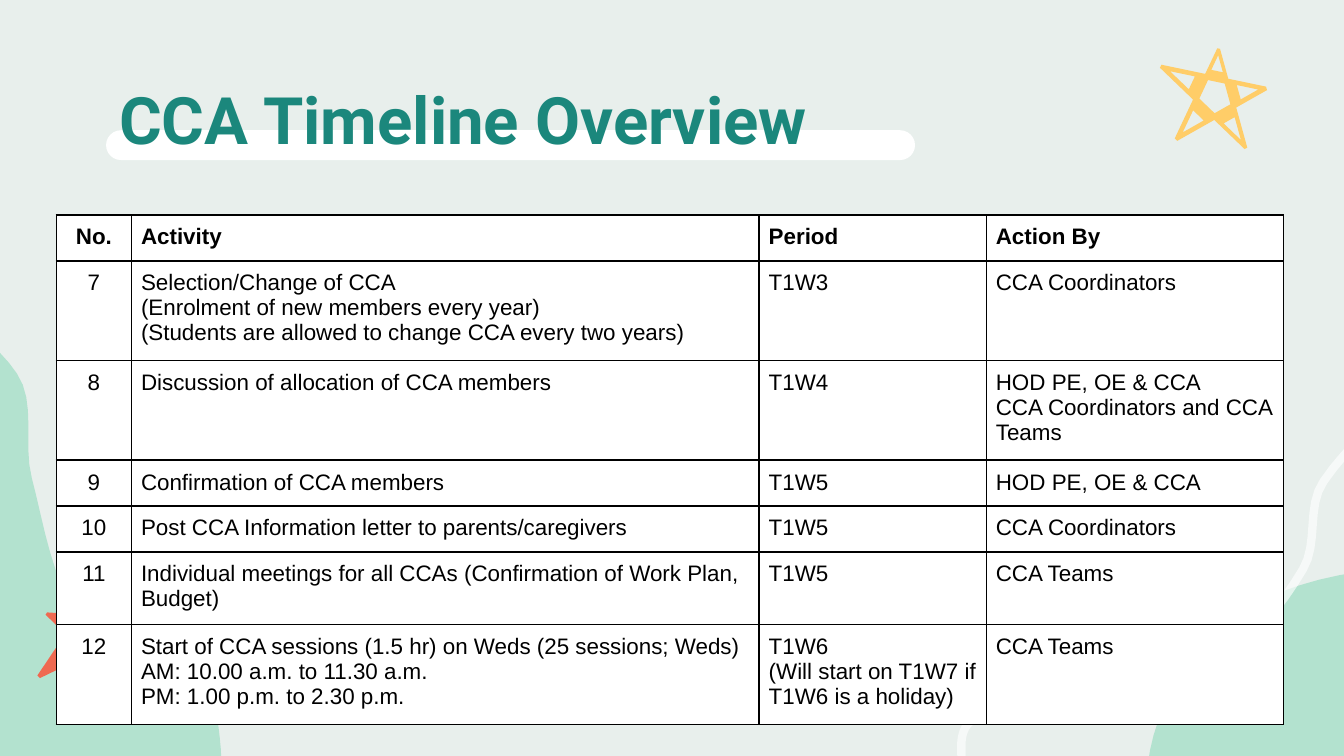
import math
from dataclasses import dataclass

from lxml import etree
from pptx import Presentation
from pptx.dml.color import RGBColor
from pptx.enum import shapes, text
from pptx.oxml import ns
from pptx.util import Pt


@dataclass(frozen=True)
class Theme:
    background: str = "E8EFEC"
    mint: str = "B3E2CF"
    white: str = "FFFFFF"
    teal: str = "1B877C"
    yellow: str = "FFCD68"
    red: str = "EF6951"
    black: str = "000000"
    title_font: str = "Roboto"
    body_font: str = "Arial"
    title_size: int = 35
    body_size: int = 12


THEME = Theme()

# Points that each closed curve passes through.
RIGHT_BLOB = [(807, 318), (739, 305), (657, 333), (618, 394), (621, 460),
              (664, 522), (749, 547), (872, 481), (878, 384)]
LEFT_BLOB = [(53, 505), (-38, 497), (-57, 459), (-106, 251), (-39, 174), (9, 200),
             (17, 256), (44, 333), (105, 372), (117, 389), (113, 436)]
RIBBON = [(515, 400), (524, 457), (588, 483), (755, 504), (799, 490), (822, 457),
          (835, 394), (860, 240), (829, 203), (762, 212), (709, 258), (698, 305),
          (650, 356), (578, 370), (521, 386)]
RIBBON_WIDTH = 4.5

# Five tips of each star, clockwise from the top.
YELLOW_TIPS = [(653, 24), (681, 47), (669, 82), (628, 77), (619, 34)]
RED_TIPS = [(57, 307), (86, 332), (69, 372), (18, 365), (23, 328)]

COLUMN_WIDTHS = [40.3, 336.3, 121.7, 159.1]
CELL_MARGIN = 5.1
MINIMUM_ROW_HEIGHT = 1  # rows grow to fit their text
ROWS = [
    ("No.", "Activity", "Period", "Action By"),
    ("7", "Selection/Change of CCA\n(Enrolment of new members every year)\n"
     "(Students are allowed to change CCA every two years)",
     "T1W3", "CCA Coordinators"),
    ("8", "Discussion of allocation of CCA members", "T1W4",
     "HOD PE, OE & CCA\nCCA Coordinators and CCA Teams"),
    ("9", "Confirmation of CCA members", "T1W5", "HOD PE, OE & CCA"),
    ("10", "Post CCA Information letter to parents/caregivers", "T1W5",
     "CCA Coordinators"),
    ("11", "Individual meetings for all CCAs (Confirmation of Work Plan, Budget)",
     "T1W5", "CCA Teams"),
    ("12", "Start of CCA sessions (1.5 hr) on Weds (25 sessions; Weds)\n"
     "AM: 10.00 a.m. to 11.30 a.m.\nPM: 1.00 p.m. to 2.30 p.m.",
     "T1W6\n(Will start on T1W7 if T1W6 is a holiday)", "CCA Teams"),
]


def between(start, end, share):
    return tuple(a + (b - a) * share for a, b in zip(start, end))


def unit_tangents(points):
    """Direction of a closed curve at each point, from its two neighbours."""
    tangents = []
    for i in range(len(points)):
        before, after = points[i - 1], points[(i + 1) % len(points)]
        length = math.dist(before, after)
        tangents.append(tuple((b - a) / length for a, b in zip(before, after)))
    return tangents


def smooth(points, steps=8):
    """Closed Hermite curve through the points, with tangents scaled to each span."""
    tangents = unit_tangents(points)
    curve = []
    for i, start in enumerate(points):
        j = (i + 1) % len(points)
        span = math.dist(start, points[j])
        for step in range(steps):
            t = step / steps
            base = between(start, points[j], t * t * (3 - 2 * t))
            leave, arrive = t * (1 - t) ** 2 * span, t * t * (t - 1) * span
            curve.append(tuple(
                position + leave * out + arrive * into
                for position, out, into in zip(base, tangents[i], tangents[j])))
    return curve


def offset(curve, distance):
    return [(x - dy * distance, y + dx * distance)
            for (x, y), (dx, dy) in zip(curve, unit_tangents(curve))]


def crossing(a, b, c, d):
    """Point where line ab meets line cd."""
    (abx, aby), (cdx, cdy) = [(q[0] - p[0], q[1] - p[1]) for p, q in ((a, b), (c, d))]
    share = ((c[0] - a[0]) * cdy - (c[1] - a[1]) * cdx) / (abx * cdy - aby * cdx)
    return between(a, b, share)


def shrink(polygon, factor):
    center = tuple(sum(axis) / len(polygon) for axis in zip(*polygon))
    return [between(center, point, factor) for point in polygon]


def star_contours(tips, hollow=True, blunt=0.12):
    """Star outline with blunted tips; a hollow star looks drawn in one stroke."""
    count = len(tips)
    valleys = [crossing(tips[i], tips[(i + 2) % count], tips[i - 1], tips[(i + 1) % count])
               for i in range(count)]
    outline, arms = [], []
    for i, tip in enumerate(tips):
        left, right = valleys[i - 1], valleys[i]
        outline += [between(tip, left, blunt), between(tip, right, blunt), right]
        arms.append([left, tip, right])
    holes = [shrink(valleys, 0.72)] + [shrink(arm, 0.5) for arm in arms]
    return [outline] + (holes if hollow else [])


def paint(shape, color, opacity=100):
    shape.shadow.inherit = False
    shape.line.fill.background()
    shape.fill.solid()
    shape.fill.fore_color.rgb = RGBColor.from_string(color)
    if opacity < 100:
        color_element = shape.fill._xPr.find(".//" + ns.qn("a:srgbClr"))
        etree.SubElement(color_element, ns.qn("a:alpha"), val=str(opacity * 1000))


def add_outline(slide, contours, color, opacity=100):
    """Filled freeform; contours after the first cut holes."""
    builder = None
    for contour in contours:
        start, *others = [(Pt(x), Pt(y)) for x, y in contour]
        if builder is None:
            builder = slide.shapes.build_freeform(*start)
        else:
            builder.move_to(*start)
        builder.add_line_segments(others, close=True)
    paint(builder.convert_to_shape(), color, opacity)


def add_ribbon(slide):
    center_line = smooth(RIBBON)
    edges = [offset(center_line, side * RIBBON_WIDTH / 2) for side in (1, -1)]
    add_outline(slide, edges, THEME.white, opacity=64)


def write(frame, content, *, size, font, color, bold=False, align=text.PP_ALIGN.LEFT):
    frame.word_wrap = True
    for i, line in enumerate(content.split("\n")):
        paragraph = frame.add_paragraph() if i else frame.paragraphs[0]
        paragraph.alignment = align
        run = paragraph.add_run()
        run.text = line
        run.font.size = Pt(size)
        run.font.name = font
        run.font.bold = bold
        run.font.color.rgb = RGBColor.from_string(color)


def set_margins(target, margin):
    target.margin_left = target.margin_right = Pt(margin)
    target.margin_top = target.margin_bottom = Pt(margin)


def add_title(slide, content):
    bar = slide.shapes.add_shape(
        shapes.MSO_SHAPE.ROUNDED_RECTANGLE, Pt(56.8), Pt(69.8), Pt(433.4), Pt(16))
    bar.adjustments[0] = 0.5
    paint(bar, THEME.white)
    frame = slide.shapes.add_textbox(Pt(56.8), Pt(35.3), Pt(607), Pt(45.4)).text_frame
    set_margins(frame, 7.2)
    write(frame, content, size=THEME.title_size, font=THEME.title_font,
          color=THEME.teal, bold=True)


def format_cell(cell):
    set_margins(cell, CELL_MARGIN)
    properties = cell._tc.get_or_add_tcPr()
    for side in ("lnL", "lnR", "lnT", "lnB"):
        line = etree.SubElement(properties, ns.qn("a:" + side), w=str(Pt(1)))
        fill = etree.SubElement(line, ns.qn("a:solidFill"))
        etree.SubElement(fill, ns.qn("a:srgbClr"), val=THEME.black)
    cell.fill.solid()
    cell.fill.fore_color.rgb = RGBColor.from_string(THEME.white)


def add_timeline(slide):
    table = slide.shapes.add_table(
        len(ROWS), len(COLUMN_WIDTHS), Pt(30.2), Pt(115.2),
        Pt(sum(COLUMN_WIDTHS)), Pt(MINIMUM_ROW_HEIGHT * len(ROWS))).table
    for column, width in zip(table.columns, COLUMN_WIDTHS):
        column.width = Pt(width)
    for r, contents in enumerate(ROWS):
        for c, content in enumerate(contents):
            cell = table.cell(r, c)
            format_cell(cell)
            write(cell.text_frame, content, size=THEME.body_size,
                  font=THEME.body_font, color=THEME.black, bold=r == 0,
                  align=text.PP_ALIGN.LEFT if c else text.PP_ALIGN.CENTER)


def main():
    presentation = Presentation()
    presentation.slide_width, presentation.slide_height = Pt(720), Pt(405)
    slide = presentation.slides.add_slide(presentation.slide_layouts[6])
    slide.background.fill.solid()
    slide.background.fill.fore_color.rgb = RGBColor.from_string(THEME.background)
    for blob in (RIGHT_BLOB, LEFT_BLOB):
        add_outline(slide, [smooth(blob)], THEME.mint)
    add_title(slide, "CCA Timeline Overview")
    add_outline(slide, star_contours(YELLOW_TIPS), THEME.yellow)
    add_outline(slide, star_contours(RED_TIPS, hollow=False), THEME.red)
    add_ribbon(slide)
    add_timeline(slide)
    presentation.save("out.pptx")


if __name__ == "__main__":
    main()
